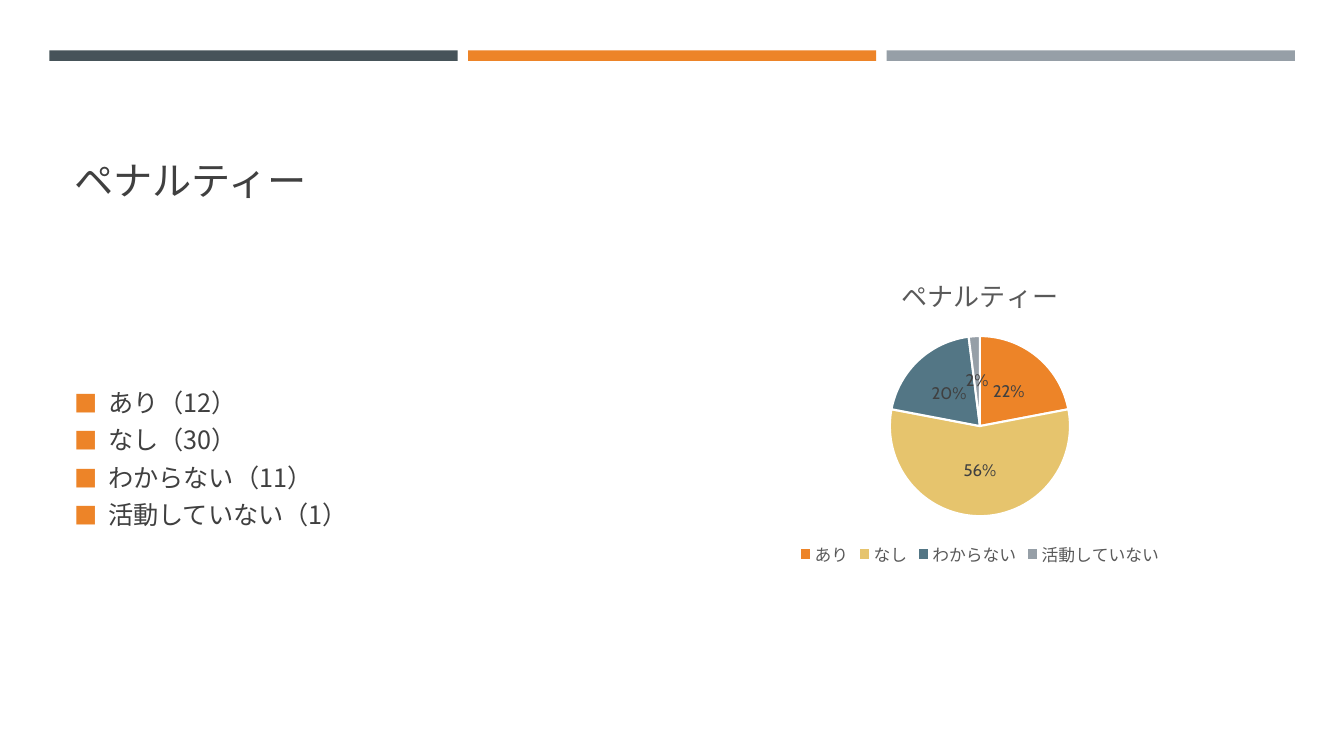
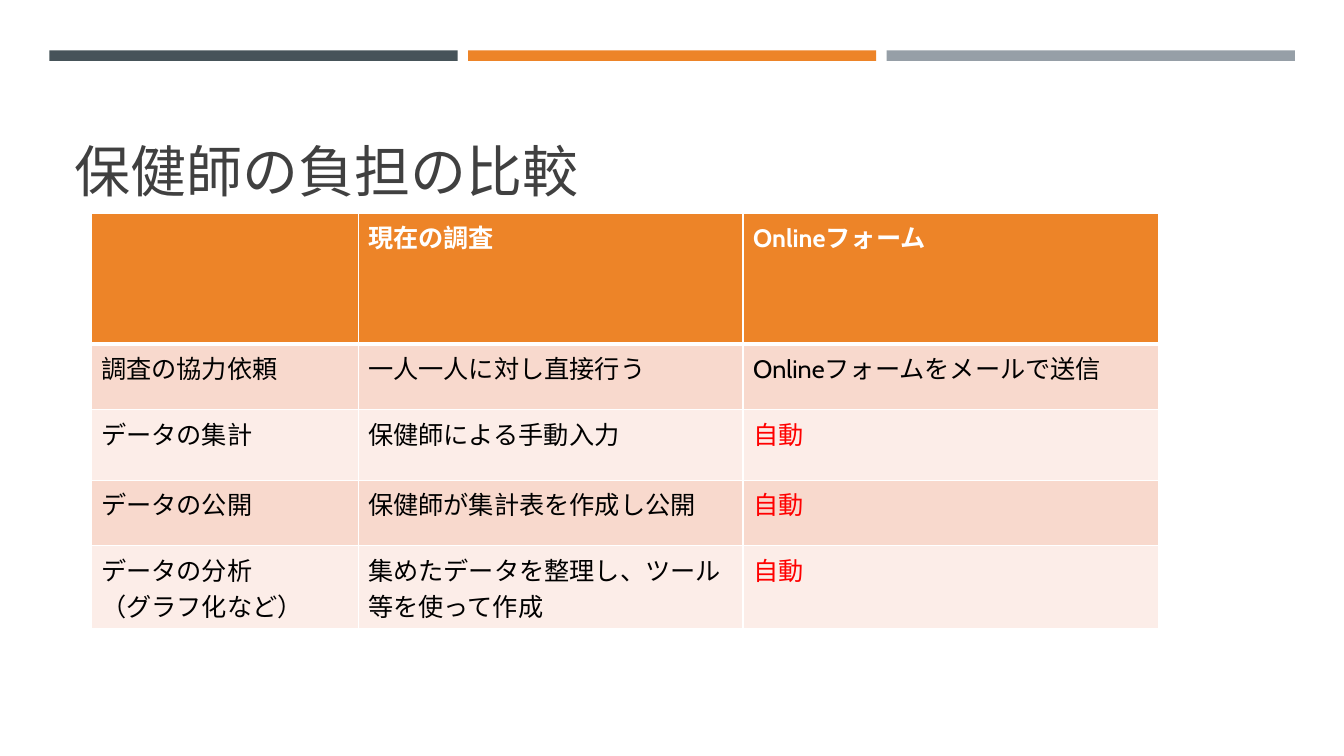
from lxml.etree import SubElement
from pptx import Presentation
from pptx.chart.data import CategoryChartData
from pptx.dml.color import RGBColor
from pptx.enum.chart import XL_CHART_TYPE, XL_LABEL_POSITION, XL_LEGEND_POSITION
from pptx.enum.shapes import MSO_SHAPE
from pptx.enum.text import MSO_ANCHOR, MSO_AUTO_SIZE, PP_ALIGN
from pptx.oxml.ns import qn
from pptx.util import Pt

COLORS = {
    "slate": "465359", "orange": "ED8428", "gray": "969FA7",
    "sand": "E6C46D", "teal": "537685", "text": "404040",
    "caption": "595959", "black": "000000", "white": "FFFFFF",
    "red": "FF0000", "rose": "F8D9CD", "blush": "FCEDE8",
}
JAPANESE = "Noto Sans CJK JP"
LATIN = "Cabin"
AUTOMATIC = "自動"
TITLE_AREA = (46, 55.5, 868.5, 93.5)
BODY_AREA = (46, 184.5, 868.5, 286)


def color(name):
    return RGBColor.from_string(COLORS[name])


def points(values):
    return [Pt(value) for value in values]


class Deck:
    def __init__(self):
        self.deck = Presentation()
        self.deck.slide_width, self.deck.slide_height = points((960, 540))
        self.page = None

    def add_page(self, layout, title, size):
        self.page = self.deck.slides.add_slide(self.deck.slide_layouts[layout])
        for index, name in enumerate(("slate", "orange", "gray")):
            self.band(35.3 + index * 299, name)
        frame = self.place(self.page.shapes.title, TITLE_AREA, MSO_ANCHOR.BOTTOM)
        para = frame.paragraphs[0]
        para.alignment = PP_ALIGN.LEFT
        self.add_span(para, title, "text", name=JAPANESE, size=Pt(size))

    def band(self, left, name):
        box = self.page.shapes.add_shape(
            MSO_SHAPE.RECTANGLE, *points((left, 36, 291.6, 7.5)))
        box.shadow.inherit = False
        box.fill.solid()
        box.fill.fore_color.rgb = color(name)
        box.line.fill.background()

    def place(self, box, area, anchor):
        box.left, box.top, box.width, box.height = points(area)
        frame = box.text_frame
        settings = {"word_wrap": True, "auto_size": MSO_AUTO_SIZE.NONE,
                    "vertical_anchor": anchor}
        for key, value in settings.items():
            setattr(frame, key, value)
        return frame

    def style(self, font, color_name, **settings):
        for key, value in settings.items():
            setattr(font, key, value)
        font.color.rgb = color(color_name)

    def add_span(self, para, text, color_name, **settings):
        span = para.add_run()
        span.text = text
        self.style(span.font, color_name, **settings)
        SubElement(span._r.get_or_add_rPr(), qn("a:ea"), typeface=JAPANESE)

    def bullet(self, para):
        props = para._p.get_or_add_pPr()
        props.set("marL", str(Pt(24)))
        props.set("indent", str(-Pt(24)))
        tint = SubElement(props, qn("a:buClr"))
        SubElement(tint, qn("a:srgbClr"), val=COLORS["orange"])
        SubElement(props, qn("a:buSzPct"), val="92000")
        SubElement(props, qn("a:buFont"), typeface=JAPANESE)
        SubElement(props, qn("a:buChar"), char="■")

    def bullets(self, items):
        frame = self.place(self.page.placeholders[1], BODY_AREA, MSO_ANCHOR.MIDDLE)
        for index, item in enumerate(items):
            para = frame.add_paragraph() if index else frame.paragraphs[0]
            self.bullet(para)
            para.space_before = Pt(0)
            para.space_after = Pt(5.2)
            self.add_span(para, item, "text", name=JAPANESE, size=Pt(18))

    def pie(self, area, title, slices):
        data = CategoryChartData()
        data.categories = [label for label, _, _ in slices]
        data.add_series(title, [value for _, value, _ in slices])
        chart = self.page.shapes.add_chart(
            XL_CHART_TYPE.PIE, *points(area), data).chart
        self.style(chart.font, "black", name=LATIN, size=Pt(10))
        chart.has_title = True
        heading = chart.chart_title.text_frame.paragraphs[0]
        self.add_span(heading, title, "caption", name=LATIN, size=Pt(18.6), bold=False)
        chart.has_legend = True
        chart.legend.position = XL_LEGEND_POSITION.BOTTOM
        chart.legend.include_in_layout = False
        self.style(chart.legend.font, "caption", name=LATIN, size=Pt(12))
        plot = chart.plots[0]
        plot.vary_by_categories = True
        plot.has_data_labels = True
        labels = plot.data_labels
        settings = {"show_percentage": True, "show_value": False,
                    "number_format": "0%", "number_format_is_linked": False,
                    "position": XL_LABEL_POSITION.CENTER}
        for key, value in settings.items():
            setattr(labels, key, value)
        self.style(labels.font, "text", name=LATIN, size=Pt(12))
        for index, (_, _, name) in enumerate(slices):
            part = plot.series[0].points[index].format
            part.fill.solid()
            part.fill.fore_color.rgb = color(name)
            part.line.color.rgb = color("white")
            part.line.width = Pt(1.5)

    def borders(self, cell, top, bottom):
        props = cell._tc.get_or_add_tcPr()
        for side, width in (("L", 1), ("R", 1), ("T", top), ("B", bottom)):
            line = SubElement(props, qn(f"a:ln{side}"), w=str(Pt(width)))
            fill = SubElement(line, qn("a:solidFill"))
            SubElement(fill, qn("a:srgbClr"), val=COLORS["white"])

    def table(self, area, widths, heights, rows):
        table = self.page.shapes.add_table(
            len(rows), len(widths), *points(area)).table
        for column, width in zip(table.columns, widths):
            column.width = Pt(width)
        for row, height in zip(table.rows, heights):
            row.height = Pt(height)
        for row, texts in enumerate(rows):
            header = row == 0
            fill = "orange" if header else ("blush", "rose")[row % 2]
            for column, text in enumerate(texts):
                cell = table.cell(row, column)
                self.borders(cell, 3 if row == 1 else 1, 3 if header else 1)
                cell.fill.solid()
                cell.fill.fore_color.rgb = color(fill)
                ink = "white" if header else "red" if text == AUTOMATIC else "black"
                self.fill_cell(cell, text, ink, header)

    def fill_cell(self, cell, text, ink, bold):
        if not text:
            return
        frame = cell.text_frame
        for index, line in enumerate(text.split("\n")):
            para = frame.add_paragraph() if index else frame.paragraphs[0]
            self.add_span(para, line, ink, name=LATIN, size=Pt(18), bold=bold)


def main():
    show = Deck()
    show.add_page(1, "ペナルティー", 28)
    show.bullets(["あり（12）", "なし（30）", "わからない（11）", "活動していない（1）"])
    show.pie((440, 183.6, 520, 224), "ペナルティー", [
        ("あり", 22, "orange"),
        ("なし", 56, "sand"),
        ("わからない", 20, "teal"),
        ("活動していない", 2, "gray"),
    ])

    show.add_page(5, "保健師の負担の比較", 40)
    show.table((65, 152.6, 763, 287), (190.8, 275, 297), (93.3, 46.8, 50.4, 46.8, 50.4), [
        ("", "現在の調査", "Onlineフォーム"),
        ("調査の協力依頼", "一人一人に対し直接行う", "Onlineフォームをメールで送信"),
        ("データの集計", "保健師による手動入力", AUTOMATIC),
        ("データの公開", "保健師が集計表を作成し公開", AUTOMATIC),
        ("データの分析\n（グラフ化など）", "集めたデータを整理し、ツール等を使って作成", AUTOMATIC),
    ])
    show.deck.save("out.pptx")


if __name__ == "__main__":
    main()
